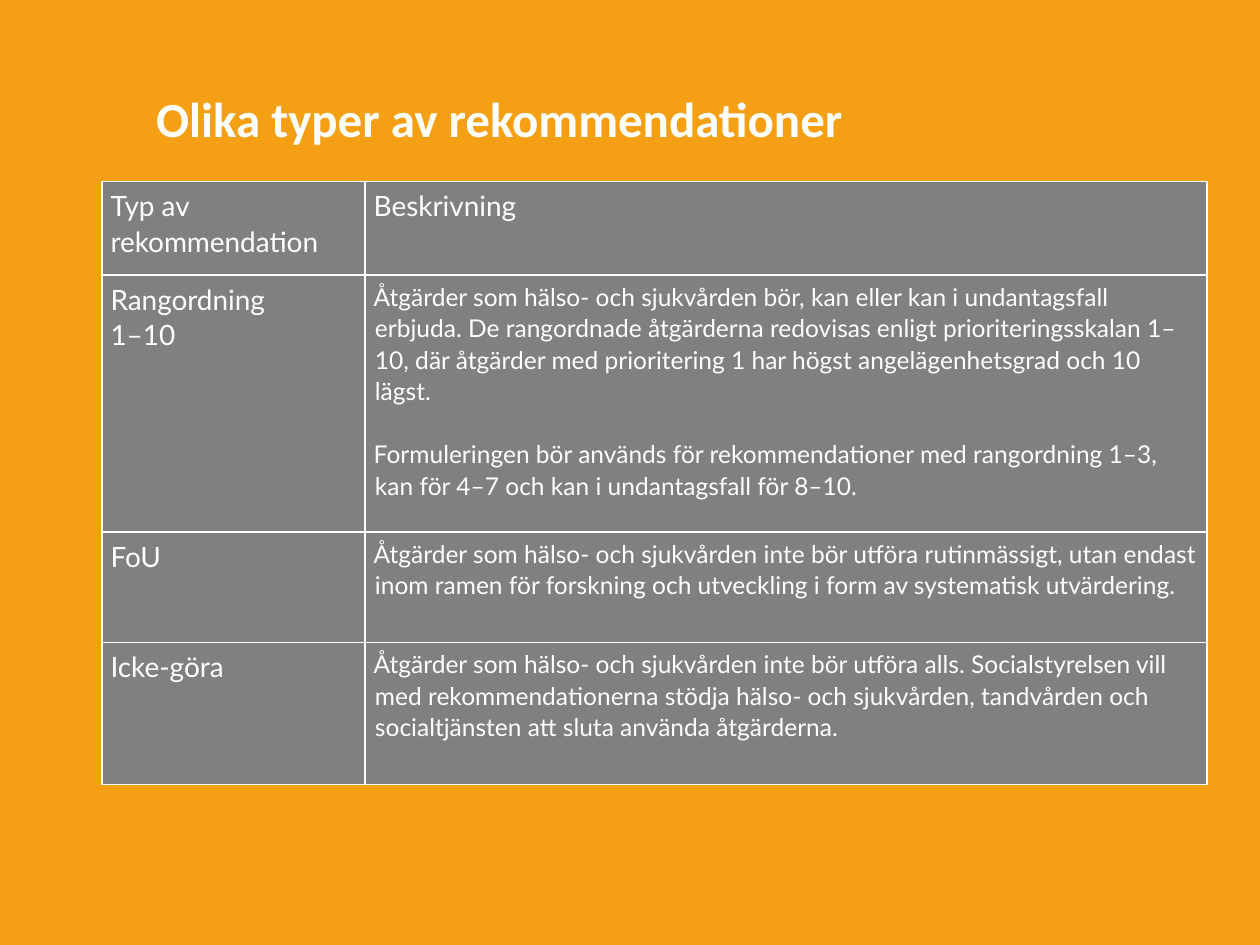
from dataclasses import dataclass

from lxml import etree
from pptx import Presentation
from pptx.dml.color import RGBColor
from pptx.enum.text import MSO_ANCHOR, MSO_AUTO_SIZE, PP_ALIGN
from pptx.oxml.ns import qn
from pptx.slide import Slide
from pptx.table import _Cell
from pptx.util import Pt

ANCHOR_BOTTOM = MSO_ANCHOR.BOTTOM
ANCHOR_TOP = MSO_ANCHOR.TOP
AUTO_SIZE_NONE = MSO_AUTO_SIZE.NONE
ALIGN_LEFT = PP_ALIGN.LEFT
TITLE_ONLY_LAYOUT = 5
BORDER_TAGS = ("a:lnL", "a:lnR", "a:lnT", "a:lnB")


@dataclass(frozen=True)
class Theme:
    background: str = "F5A014"
    cell: str = "808080"
    text: str = "FFFFFF"
    title_font: str = "Calibri"
    body_font: str = "Lato"
    title_size: float = 28
    label_size: float = 16
    description_size: float = 14
    title_line: float = 60
    body_line: float = 1.07
    paragraph_gap: float = 18
    border_width: float = 1
    hanging_indent: float = 0.72


@dataclass(frozen=True)
class Row:
    height: float
    label: tuple[str, ...]
    description: tuple[str, ...]
    description_size: float


THEME = Theme()
TITLE = "Olika typer av rekommendationer"
TITLE_FRAME = {"left": Pt(82), "top": Pt(15.8), "width": Pt(553), "height": Pt(131.8)}
TABLE_LEFT, TABLE_TOP = 58.2, 103.6
COLUMN_WIDTHS = (150.4, 481.1)
ROWS = (
    Row(53.6, ("Typ av", "rekommendation"), ("Beskrivning",), THEME.label_size),
    Row(
        146.9,
        ("Rangordning", "1–10"),
        (
            "Åtgärder som hälso- och sjukvården bör, kan eller kan i undantagsfall erbjuda. "
            "De rangordnade åtgärderna redovisas enligt prioriteringsskalan 1–10, där åtgärder "
            "med prioritering 1 har högst angelägenhetsgrad och 10 lägst.",
            "Formuleringen bör används för rekommendationer med rangordning 1–3, "
            "kan för 4–7 och kan i undantagsfall för 8–10.",
        ),
        THEME.description_size,
    ),
    Row(
        63.1,
        ("FoU",),
        (
            "Åtgärder som hälso- och sjukvården inte bör utföra rutinmässigt, utan endast inom "
            "ramen för forskning och utveckling i form av systematisk utvärdering.",
        ),
        THEME.description_size,
    ),
    Row(
        81.1,
        ("Icke-göra",),
        (
            "Åtgärder som hälso- och sjukvården inte bör utföra alls. Socialstyrelsen vill med "
            "rekommendationerna stödja hälso- och sjukvården, tandvården och socialtjänsten "
            "att sluta använda åtgärderna.",
        ),
        THEME.description_size,
    ),
)


def apply_format(target: object, values: dict[str, object]) -> None:
    """Set every attribute named in the format values."""
    for name, value in values.items():
        setattr(target, name, value)


def format_font(font: object, name: str, size: float, bold: bool) -> None:
    """Give a font its typeface, size, weight and the theme text colour."""
    apply_format(font, {"name": name, "size": Pt(size), "bold": bold})
    font.color.rgb = RGBColor.from_string(THEME.text)


def add_title(slide: Slide) -> None:
    """Place and format the title placeholder."""
    title = slide.shapes.title
    apply_format(title, TITLE_FRAME)
    frame = title.text_frame
    frame.text = TITLE
    apply_format(frame, {
        "auto_size": AUTO_SIZE_NONE,
        "word_wrap": True,
        "vertical_anchor": ANCHOR_BOTTOM,
        "margin_left": Pt(7.2),
        "margin_right": Pt(7.2),
        "margin_top": Pt(3.6),
        "margin_bottom": Pt(3.6 + THEME.title_line),
    })
    paragraph = frame.paragraphs[0]
    apply_format(paragraph, {
        "alignment": ALIGN_LEFT,
        "line_spacing": Pt(THEME.title_line),
        "space_before": Pt(0),
    })
    format_font(paragraph.runs[0].font, THEME.title_font, THEME.title_size, True)


def add_borders(cell: _Cell) -> None:
    """Draw a solid line on all four sides of a cell."""
    properties = cell._tc.get_or_add_tcPr()
    for tag in BORDER_TAGS:
        line = etree.SubElement(properties, qn(tag), w=str(Pt(THEME.border_width)))
        fill = etree.SubElement(line, qn("a:solidFill"))
        etree.SubElement(fill, qn("a:srgbClr"), val=THEME.text)


def fill_cell(cell: _Cell, texts: tuple[str, ...], size: float, gap: float) -> None:
    """Write the paragraphs of a cell and format it."""
    add_borders(cell)
    cell.fill.solid()
    cell.fill.fore_color.rgb = RGBColor.from_string(THEME.cell)
    apply_format(cell, {
        "margin_left": Pt(5),
        "margin_right": Pt(5),
        "margin_top": Pt(3),
        "margin_bottom": Pt(0),
        "vertical_anchor": ANCHOR_TOP,
    })
    cell.text_frame.text = "\n".join(texts)
    for index, paragraph in enumerate(cell.text_frame.paragraphs):
        properties = paragraph._p.get_or_add_pPr()
        properties.set("marL", str(Pt(THEME.hanging_indent)))
        properties.set("indent", str(-Pt(THEME.hanging_indent)))
        apply_format(paragraph, {
            "alignment": ALIGN_LEFT,
            "line_spacing": THEME.body_line,
            "space_before": Pt(gap if index else 0),
        })
        format_font(paragraph.runs[0].font, THEME.body_font, size, False)


def add_recommendation_table(slide: Slide) -> None:
    """Add the table of recommendation types."""
    height = sum(row.height for row in ROWS)
    table = slide.shapes.add_table(
        len(ROWS), len(COLUMN_WIDTHS),
        Pt(TABLE_LEFT), Pt(TABLE_TOP), Pt(sum(COLUMN_WIDTHS)), Pt(height),
    ).table
    apply_format(table, {"first_row": False, "horz_banding": False})
    for column, width in zip(table.columns, COLUMN_WIDTHS):
        column.width = Pt(width)
    for index, row in enumerate(ROWS):
        table.rows[index].height = Pt(row.height)
        fill_cell(table.cell(index, 0), row.label, THEME.label_size, 0)
        fill_cell(table.cell(index, 1), row.description, row.description_size, THEME.paragraph_gap)


def main() -> None:
    """Build and save the presentation."""
    presentation = Presentation()
    apply_format(presentation, {"slide_width": Pt(720), "slide_height": Pt(540)})
    slide = presentation.slides.add_slide(presentation.slide_layouts[TITLE_ONLY_LAYOUT])
    slide.background.fill.solid()
    slide.background.fill.fore_color.rgb = RGBColor.from_string(THEME.background)
    add_title(slide)
    add_recommendation_table(slide)
    presentation.save("out.pptx")


if __name__ == "__main__":
    main()
